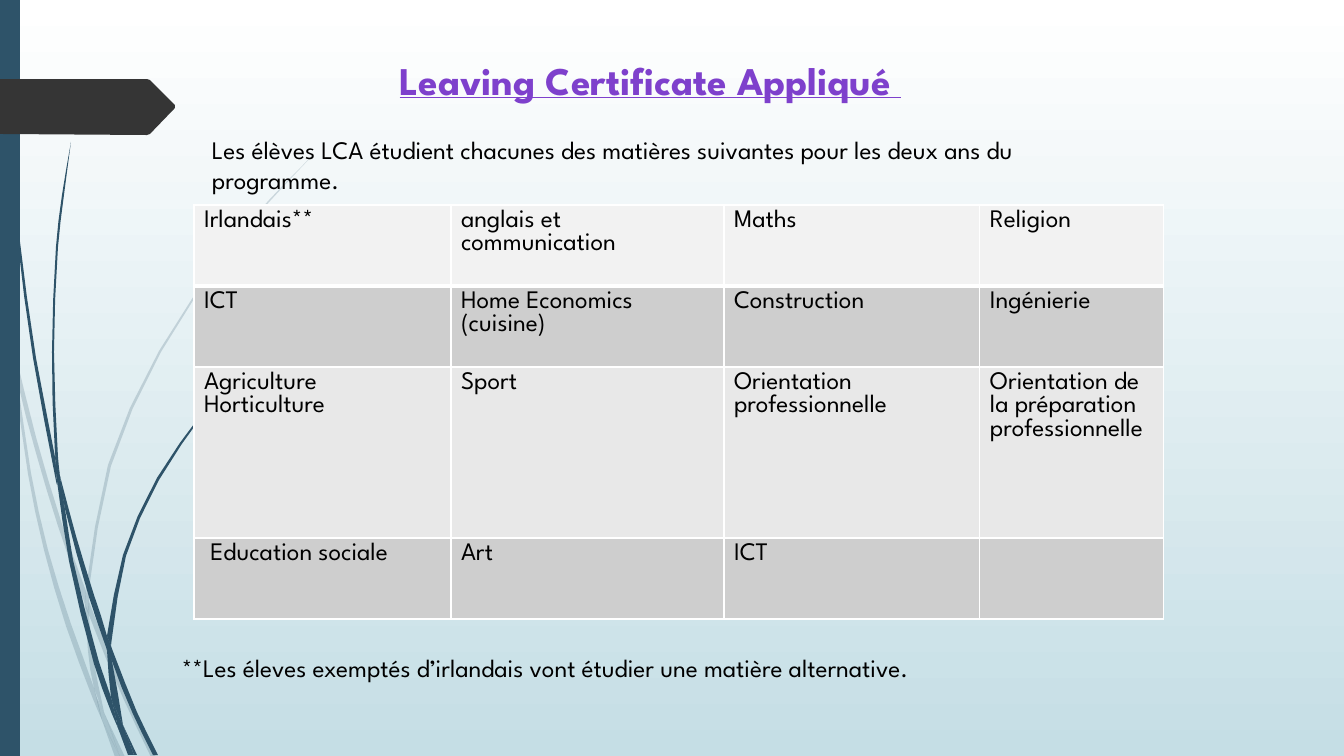
from lxml import etree
from pptx import Presentation
from pptx import util as u
from pptx.dml.color import RGBColor
from pptx.enum import shapes, text
from pptx.oxml.ns import qn

SCALE = 914400 / 100.8
WIDTH, HEIGHT = 1344, 756
TEAL, CHARCOAL, PURPLE, BLACK, WHITE = "2E5369", "353535", "7E40CC", "000000", "FFFFFF"
PALE_OPACITY = 20

PALE_BLADES = [
    ([(0, 284), (0, 301), (10, 347), (11, 353)], [(0, 284), (9, 325), (11, 353)]),
    ([(14, 348), (17, 379), (36, 453), (58, 526), (85, 604)],
     [(14, 348), (36, 437), (62, 524), (86, 591)]),
    ([(89, 601), (89, 615), (124, 700), (151, 757)],
     [(89, 601), (93, 612), (128, 698), (156, 757)]),
    ([(106, 717), (120, 757)], [(106, 717), (125, 757)]),
    ([(11, 353), (28, 474), (44, 550), (66, 626), (93, 699), (102, 720)],
     [(11, 353), (17, 379), (31, 473), (48, 550), (71, 624), (94, 688), (102, 720)]),
    ([(85, 604), (88, 651), (94, 688), (106, 717)],
     [(85, 604), (89, 615), (92, 651), (104, 712), (106, 717)]),
    ([(314, 154), (270, 199), (230, 246), (159, 351), (108, 465), (86, 589)],
     [(314, 154), (271, 200), (231, 247), (161, 352), (111, 466), (89, 589), (89, 601)]),
    ([(102, 720), (115, 757)], [(102, 720), (120, 757)]),
    ([(86, 591), (85, 604), (89, 615)], [(86, 591), (89, 601), (89, 615)]),
    ([(94, 688), (100, 713), (102, 720), (120, 757)],
     [(94, 688), (97, 698), (106, 717), (120, 757)]),
]
DARK_BLADES = [
    ([(3, 0), (4, 48), (7, 111), (17, 235), (33, 358), (56, 481), (57, 485)],
     [(4, 0), (5, 48), (8, 110), (19, 234), (36, 358), (55, 457), (57, 485)]),
    ([(60, 476), (65, 509), (89, 597), (107, 650)],
     [(60, 476), (76, 536), (94, 595), (107, 636), (107, 650)]),
    ([(111, 646), (112, 661), (133, 714), (153, 755)],
     [(111, 646), (114, 654), (137, 712), (158, 755)]),
    ([(57, 481), (69, 561), (94, 664), (112, 714), (118, 728)],
     [(57, 481), (65, 509), (73, 560), (99, 662), (111, 697), (118, 728)]),
    ([(71, 142), (62, 195), (56, 247), (52, 352), (55, 453), (60, 476)],
     [(71, 142), (64, 195), (58, 247), (54, 352), (58, 457), (60, 476)]),
    ([(123, 725), (134, 755)], [(123, 725), (137, 755)]),
    ([(55, 453), (57, 481), (65, 509)], [(55, 453), (60, 476), (65, 509)]),
    ([(262, 347), (233, 376), (206, 408), (157, 478), (123, 555), (107, 636)],
     [(263, 347), (233, 377), (207, 409), (159, 480), (126, 556), (112, 638), (111, 646)]),
    ([(118, 728), (128, 755)], [(118, 728), (132, 755)]),
    ([(107, 650), (111, 697), (117, 712), (123, 725)], [(107, 650), (112, 661), (123, 725)]),
    ([(107, 636), (107, 650), (112, 661)], [(107, 636), (111, 646), (112, 661)]),
    ([(111, 697), (117, 723), (118, 728), (131, 755)],
     [(111, 697), (117, 712), (123, 725), (134, 755)]),
]
TAG = [(0, 79), (147, 79), (150, 80), (175, 105), (175, 108), (150, 134), (147, 135), (0, 134)]

SUBJECTS = [
    ["Irlandais**", "anglais et communication", "Maths", "Religion"],
    ["ICT", "Home Economics (cuisine)", "Construction", "Ingénierie"],
    ["Agriculture Horticulture", "Sport", "Orientation professionnelle",
     "Orientation de la préparation professionnelle"],
    [" Education sociale", "Art", "ICT", ""],
]
ROW_FILLS = ["F2F2F2", "CECECE", "E8E8E8", "CECECE"]
COLUMN_WIDTHS = [257, 273, 256, 184]
ROW_HEIGHTS = [81, 81, 171, 81]


def px(length):
    return u.Emu(round(length * SCALE))


def colour(code):
    return RGBColor.from_string(code)


def smooth(knots):
    last = len(knots) - 1

    def slope(index):
        before, after = knots[max(index - 1, 0)], knots[min(index + 1, last)]
        return (after[0] - before[0]) / (after[1] - before[1])

    curve = [knots[0]]
    for index in range(last):
        (x, y), (next_x, next_y) = knots[index:index + 2]
        bend = (next_y - y) * (slope(index) - slope(index + 1)) / 8
        curve += [((x + next_x) / 2 + bend, (y + next_y) / 2), (next_x, next_y)]
    return curve


def write(para, words, size=18, ink=BLACK, bold=False, underline=False,
          align=text.PP_ALIGN.LEFT, spacing=None, before=0):
    para.alignment = align
    para.line_spacing = spacing
    para.space_before = u.Pt(before)
    span = para.add_run()
    span.text = words
    font = span.font
    font.name, font.size = "League Spartan", u.Pt(size)
    font.bold, font.underline = bold, underline
    font.color.rgb = colour(ink)


class SubjectsPage:
    def __init__(self, deck):
        self.page = deck.slides.add_slide(deck.slide_layouts[6])
        fill = self.page.background.fill
        fill.gradient()
        fill.gradient_angle = 270
        for stop, code in zip(fill.gradient_stops, [WHITE, "C5DEE5"]):
            stop.color.rgb = colour(code)

    def paint(self, shape, code, opacity=100):
        shape.shadow.inherit = False
        shape.line.fill.background()
        shape.fill.solid()
        shape.fill.fore_color.rgb = colour(code)
        if opacity < 100:
            tint = shape.fill._xPr.find(qn("a:solidFill"))[0]
            etree.SubElement(tint, qn("a:alpha")).set("val", str(opacity * 1000))

    def rectangle(self, left, top, width, height, code):
        kind = shapes.MSO_SHAPE.RECTANGLE
        self.paint(self.page.shapes.add_shape(kind, *map(px, (left, top, width, height))), code)

    def outline(self, points, code, opacity=100):
        corners = [(px(x), px(y)) for x, y in points]
        builder = self.page.shapes.build_freeform(*corners[0])
        builder.add_line_segments(corners[1:], close=True)
        self.paint(builder.convert_to_shape(), code, opacity)

    def blade(self, left, right, opacity=100):
        edge = smooth(left) + smooth(right)[::-1]
        self.outline(list(dict.fromkeys(edge)), TEAL, opacity)

    def text_box(self, left, top, width, height, *paragraphs):
        box = self.page.shapes.add_textbox(*map(px, (left, top, width, height)))
        frame = box.text_frame
        frame.word_wrap = True
        for index, (words, style) in enumerate(paragraphs):
            para = frame.add_paragraph() if index else frame.paragraphs[0]
            write(para, words, **style)

    def border(self, cell, widths):
        properties = cell._tc.get_or_add_tcPr()
        for index, (side, width) in enumerate(widths.items()):
            line = etree.Element(qn(f"a:ln{side}"), w=str(u.Pt(width)))
            fill = etree.SubElement(line, qn("a:solidFill"))
            etree.SubElement(fill, qn("a:srgbClr")).set("val", WHITE)
            properties.insert(index, line)

    def table(self, left, top, widths, heights, rows, fills):
        size = (left, top, sum(widths), sum(heights))
        grid = self.page.shapes.add_table(len(rows), len(widths), *map(px, size)).table
        grid.first_row = grid.horz_banding = False
        for column, width in zip(grid.columns, widths):
            column.width = px(width)
        for index, (row, height) in enumerate(zip(grid.rows, heights)):
            row.height = px(height)
            for cell, words in zip(row.cells, rows[index]):
                cell.fill.solid()
                cell.fill.fore_color.rgb = colour(fills[index])
                self.border(cell, {"L": 1, "R": 1, "T": 3 if index == 1 else 1,
                                   "B": 3 if index == 0 else 1})
                if words:
                    write(cell.text_frame.paragraphs[0], words, spacing=1.0)


def main():
    deck = Presentation()
    deck.slide_width, deck.slide_height = px(WIDTH), px(HEIGHT)
    page = SubjectsPage(deck)
    for left, right in PALE_BLADES:
        page.blade(left, right, PALE_OPACITY)
    for left, right in DARK_BLADES:
        page.blade(left, right)
    page.rectangle(0, 0, 20, HEIGHT, TEAL)
    page.outline(TAG, CHARCOAL)
    page.text_box(
        202, 51, 897, 149,
        ("Leaving Certificate Appliqué ",
         dict(size=28, ink=PURPLE, bold=True, underline=True, align=text.PP_ALIGN.CENTER)),
        ("Les élèves LCA étudient chacunes des matières suivantes pour les deux ans du programme.",
         dict(before=22)))
    page.table(194, 205, COLUMN_WIDTHS, ROW_HEIGHTS, SUBJECTS, ROW_FILLS)
    page.text_box(
        172, 647, 896, 40,
        ("**Les éleves exemptés d’irlandais vont étudier une matière alternative.", {}))
    deck.save("out.pptx")


if __name__ == "__main__":
    main()
